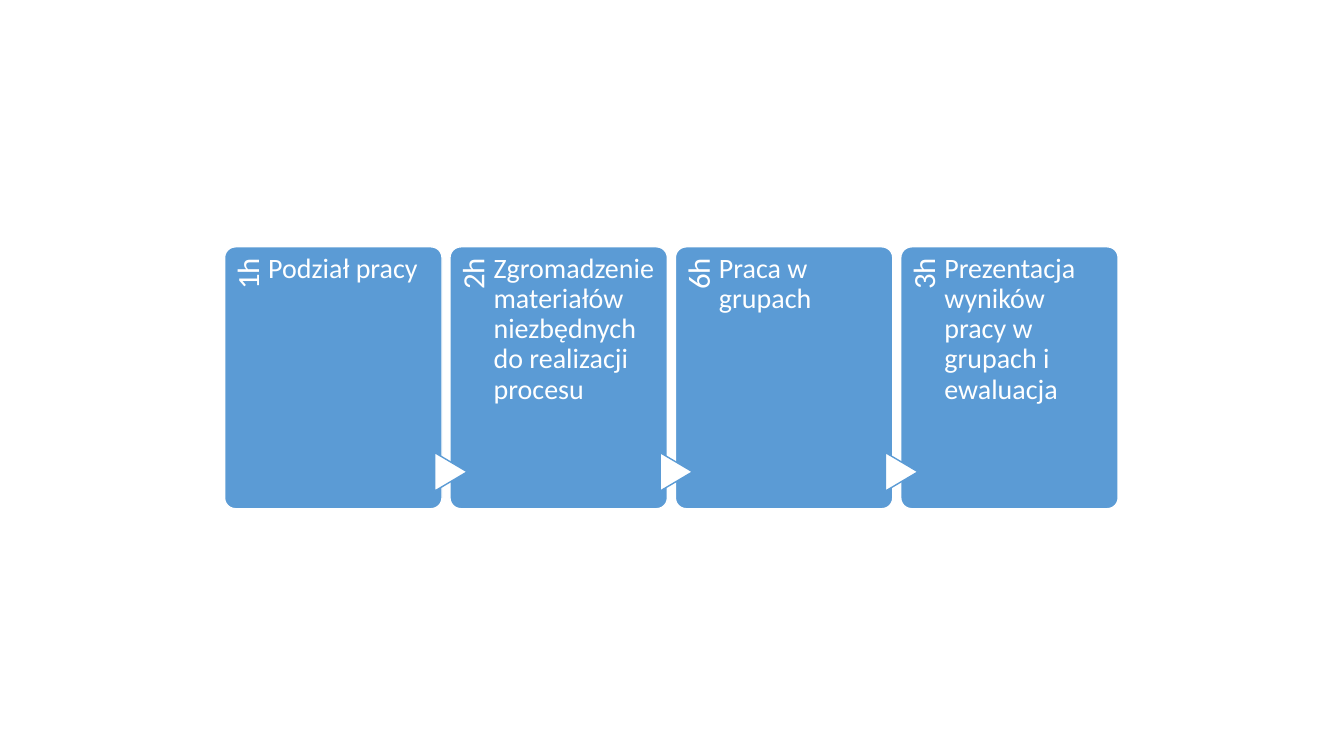
from dataclasses import dataclass

from pptx import Presentation
from pptx import util as u
from pptx.dml.color import RGBColor
from pptx.enum import shapes, text

FONT = "Calibri"
BLUE = "5B9BD5"
WHITE = "FFFFFF"

CARD_LEFT, CARD_TOP = 5.66, 6.22
CARD_WIDTH, CARD_HEIGHT = 5.48, 6.6
CARD_PITCH = 5.68


@dataclass(frozen=True)
class Stage:
    hours: str
    task: str


@dataclass(frozen=True)
class Area:
    """Left, top, width and height in centimetres."""
    left: float
    top: float
    width: float
    height: float

    def lengths(self) -> tuple:
        return u.Cm(self.left), u.Cm(self.top), u.Cm(self.width), u.Cm(self.height)


STAGES = [
    Stage("1h", "Podział pracy"),
    Stage("2h", "Zgromadzenie materiałów niezbędnych do realizacji procesu"),
    Stage("6h", "Praca w grupach"),
    Stage("3h", "Prezentacja wyników pracy w grupach i ewaluacja"),
]


def color(value: str) -> RGBColor:
    return RGBColor.from_string(value)


def add_outlined(slide, kind, area: Area, fill: str, line: str):
    shape = slide.shapes.add_shape(kind, *area.lengths())
    shape.shadow.inherit = False
    shape.fill.solid()
    shape.fill.fore_color.rgb = color(fill)
    shape.line.color.rgb = color(line)
    shape.line.width = u.Pt(1)
    return shape


def add_label(slide, area: Area, words: str, size: int, align,
              inset_top: float, inset_right: float = 0):
    box = slide.shapes.add_textbox(*area.lengths())
    frame = box.text_frame
    frame.text = words
    frame.word_wrap = True
    frame.vertical_anchor = text.MSO_ANCHOR.TOP
    frame.margin_left = frame.margin_bottom = 0
    frame.margin_top, frame.margin_right = u.Cm(inset_top), u.Cm(inset_right)
    para = frame.paragraphs[0]
    para.alignment = align
    para.line_spacing = 0.9
    font = para.runs[0].font
    font.name, font.size = FONT, u.Pt(size)
    font.color.rgb = color(WHITE)
    return box


def add_stage(slide, index: int, stage: Stage) -> None:
    """Draw one card, with an arrow from the card before it."""
    left = CARD_LEFT + index * CARD_PITCH
    card = add_outlined(slide, shapes.MSO_SHAPE.ROUNDED_RECTANGLE,
                        Area(left, CARD_TOP, CARD_WIDTH, CARD_HEIGHT), BLUE, WHITE)
    card.adjustments[0] = 0.05

    hours = add_label(slide, Area(left - 2.16, CARD_TOP + 2.16, 5.41, 1.09),
                      stage.hours, 22, text.PP_ALIGN.RIGHT, 0.2, 0.28)
    hours.rotation = 270

    if index > 0:
        arrow = add_outlined(slide, shapes.MSO_SHAPE.FLOWCHART_EXTRACT,
                             Area(left - 0.46, CARD_TOP + 5.26, 0.97, 0.82), WHITE, BLUE)
        arrow.rotation = 90

    add_label(slide, Area(left + 1.1, CARD_TOP, 4.09, CARD_HEIGHT),
              stage.task, 20, text.PP_ALIGN.LEFT, 0.18)


def main() -> None:
    deck = Presentation()
    deck.slide_width, deck.slide_height = u.Cm(33.87), u.Cm(19.05)
    slide = deck.slides.add_slide(deck.slide_layouts[6])
    for index, stage in enumerate(STAGES):
        add_stage(slide, index, stage)
    deck.save("out.pptx")


if __name__ == "__main__":
    main()
